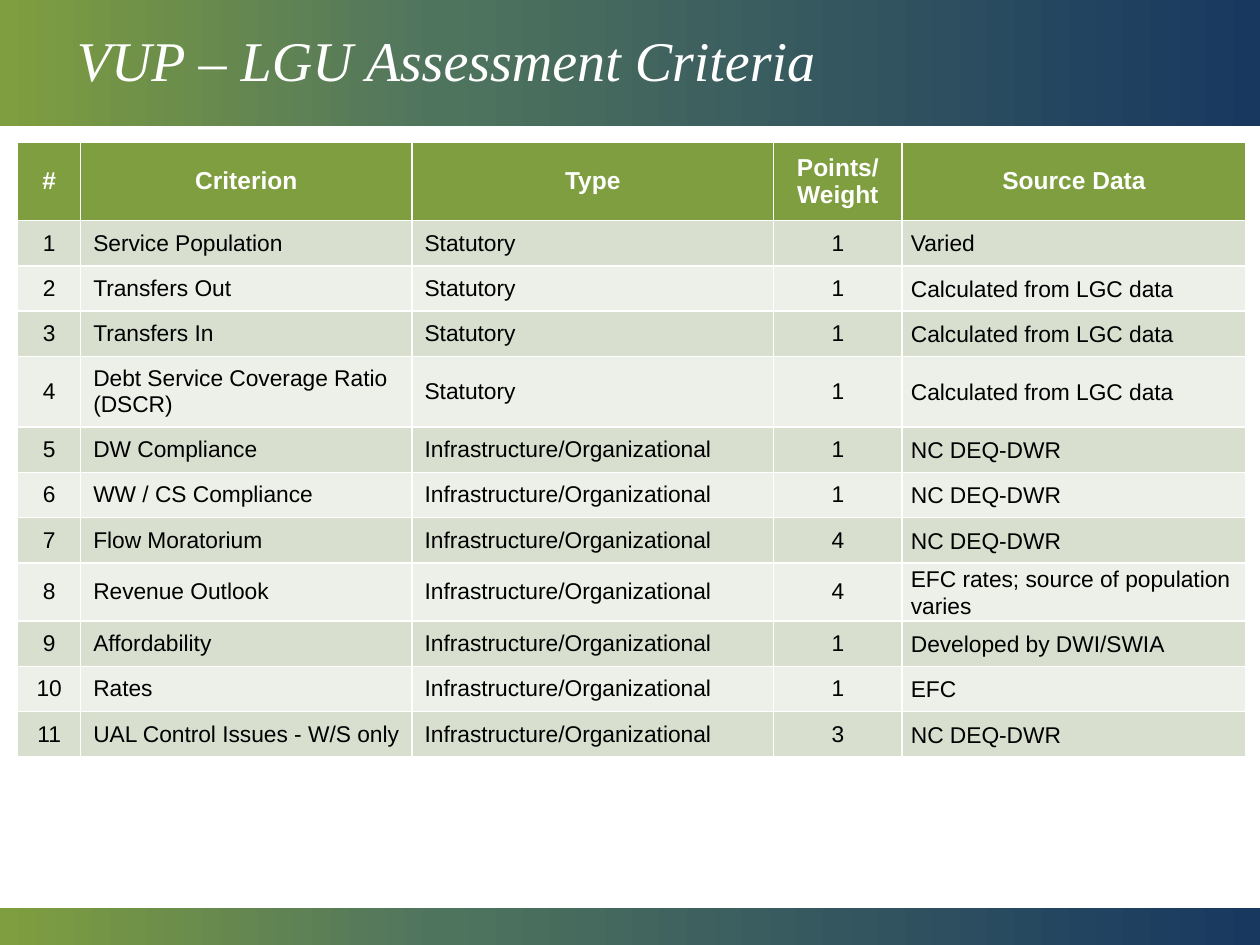
import copy
from typing import NamedTuple

import pptx
import pptx.dml.color
import pptx.enum.dml
import pptx.enum.shapes
import pptx.enum.text
import pptx.oxml.ns
import pptx.util

Inches = pptx.util.Inches
RGBColor = pptx.dml.color.RGBColor
Align = pptx.enum.text.PP_ALIGN
Anchor = pptx.enum.text.MSO_ANCHOR

WHITE = RGBColor(0xFF, 0xFF, 0xFF)
BLACK = RGBColor(0, 0, 0)
GREEN = RGBColor(0x7F, 0x9E, 0x3F)
TEAL = RGBColor(0x4F, 0x74, 0x5E)
NAVY = RGBColor(0x18, 0x38, 0x60)
BANDS = (RGBColor(0xD8, 0xDF, 0xCF), RGBColor(0xEC, 0xF0, 0xE8))
BAR_STOPS = ((0, GREEN), (0.35, TEAL), (1, NAVY))

SLIDE_WIDTH, SLIDE_HEIGHT = Inches(10), Inches(7.5)
ROW_HEIGHT = 0.36
TALL_ROWS = {0: 0.62, 4: 0.56, 8: 0.46}


class Column(NamedTuple):
    heading: str
    width: float
    alignment: Align = Align.LEFT
    tight: bool = False


class Criterion(NamedTuple):
    name: str
    kind: str
    points: int
    source: str


COLUMNS = (
    Column("#", 0.5, Align.CENTER),
    Column("Criterion", 2.63),
    Column("Type", 2.87),
    Column("Points/Weight", 1.02, Align.CENTER),
    Column("Source Data", 2.73, tight=True),
)

STATUTORY = "Statutory"
INFRASTRUCTURE = "Infrastructure/Organizational"
CALCULATED = "Calculated from LGC data"
REGULATOR = "NC DEQ-DWR"

CRITERIA = (
    Criterion("Service Population", STATUTORY, 1, "Varied"),
    Criterion("Transfers Out", STATUTORY, 1, CALCULATED),
    Criterion("Transfers In", STATUTORY, 1, CALCULATED),
    Criterion("Debt Service Coverage Ratio (DSCR)", STATUTORY, 1, CALCULATED),
    Criterion("DW Compliance", INFRASTRUCTURE, 1, REGULATOR),
    Criterion("WW / CS Compliance", INFRASTRUCTURE, 1, REGULATOR),
    Criterion("Flow Moratorium", INFRASTRUCTURE, 4, REGULATOR),
    Criterion("Revenue Outlook", INFRASTRUCTURE, 4, "EFC rates; source of population varies"),
    Criterion("Affordability", INFRASTRUCTURE, 1, "Developed by DWI/SWIA"),
    Criterion("Rates", INFRASTRUCTURE, 1, "EFC"),
    Criterion("UAL Control Issues - W/S only", INFRASTRUCTURE, 3, REGULATOR),
)


def add_bar(slide, top: int, height: int) -> None:
    """Add a full-width gradient bar behind everything else."""
    shape = slide.shapes.add_shape(
        pptx.enum.shapes.MSO_SHAPE.RECTANGLE, 0, top, SLIDE_WIDTH, height)
    shape.shadow.inherit = False
    shape.line.fill.background()
    shape.fill.gradient()
    shape.fill.gradient_angle = 0
    # A new gradient has two stops; the third needs XML
    stop_list = shape._element.spPr.find(".//" + pptx.oxml.ns.qn("a:gsLst"))
    stop_list.append(copy.deepcopy(stop_list[-1]))
    for stop, (position, color) in zip(shape.fill.gradient_stops, BAR_STOPS):
        stop.position = position
        stop.color.rgb = color
    slide.shapes._spTree.insert(2, shape._element)


def format_font(font, name: str, size: float, color: RGBColor) -> None:
    font.name = name
    font.size = pptx.util.Pt(size)
    font.color.rgb = color


def format_title(title) -> None:
    title.left, title.top = Inches(0.51), 0
    title.width, title.height = Inches(9.1), Inches(1)
    frame = title.text_frame
    frame.text = "VUP – LGU Assessment Criteria"
    frame.auto_size = pptx.enum.text.MSO_AUTO_SIZE.NONE
    frame.vertical_anchor = Anchor.MIDDLE
    paragraph = frame.paragraphs[0]
    paragraph.alignment = Align.LEFT
    paragraph.line_spacing = 0.9
    font = paragraph.runs[0].font
    format_font(font, "Times New Roman", 32, WHITE)
    font.italic = True


def fill_cell(cell, text: str, column: Column, row: int) -> None:
    header = row == 0
    cell.fill.solid()
    cell.fill.fore_color.rgb = GREEN if header else BANDS[(row - 1) % 2]
    cell.vertical_anchor = Anchor.MIDDLE
    cell.text_frame.text = text
    paragraph = cell.text_frame.paragraphs[0]
    paragraph.alignment = Align.CENTER if header else column.alignment
    font = paragraph.runs[0].font
    format_font(font, "Arial", 14 if header else 13, WHITE if header else BLACK)
    font.bold = header
    if column.tight and not header:
        cell.margin_left = cell.margin_right = Inches(0.07)
        cell.margin_top = cell.margin_bottom = 0
        paragraph.line_spacing = 1.07


def add_criteria_table(slide) -> None:
    rows = [[column.heading for column in COLUMNS]]
    rows += [[str(number), item.name, item.kind, str(item.points), item.source]
             for number, item in enumerate(CRITERIA, start=1)]
    heights = [TALL_ROWS.get(row, ROW_HEIGHT) for row in range(len(rows))]
    table = slide.shapes.add_table(
        len(rows), len(COLUMNS), Inches(0.14), Inches(1.13),
        Inches(sum(column.width for column in COLUMNS)), Inches(sum(heights))).table
    for index, column in enumerate(COLUMNS):
        table.columns[index].width = Inches(column.width)
    for row, texts in enumerate(rows):
        table.rows[row].height = Inches(heights[row])
        for index, column in enumerate(COLUMNS):
            fill_cell(table.cell(row, index), texts[index], column, row)


def main() -> None:
    presentation = pptx.Presentation()
    presentation.slide_width, presentation.slide_height = SLIDE_WIDTH, SLIDE_HEIGHT
    slide = presentation.slides.add_slide(presentation.slide_layouts[5])

    # Top and bottom bars
    add_bar(slide, 0, Inches(1))
    add_bar(slide, Inches(7.21), Inches(0.3))

    # Title and table
    format_title(slide.shapes.title)
    add_criteria_table(slide)
    presentation.save("out.pptx")


if __name__ == "__main__":
    main()
